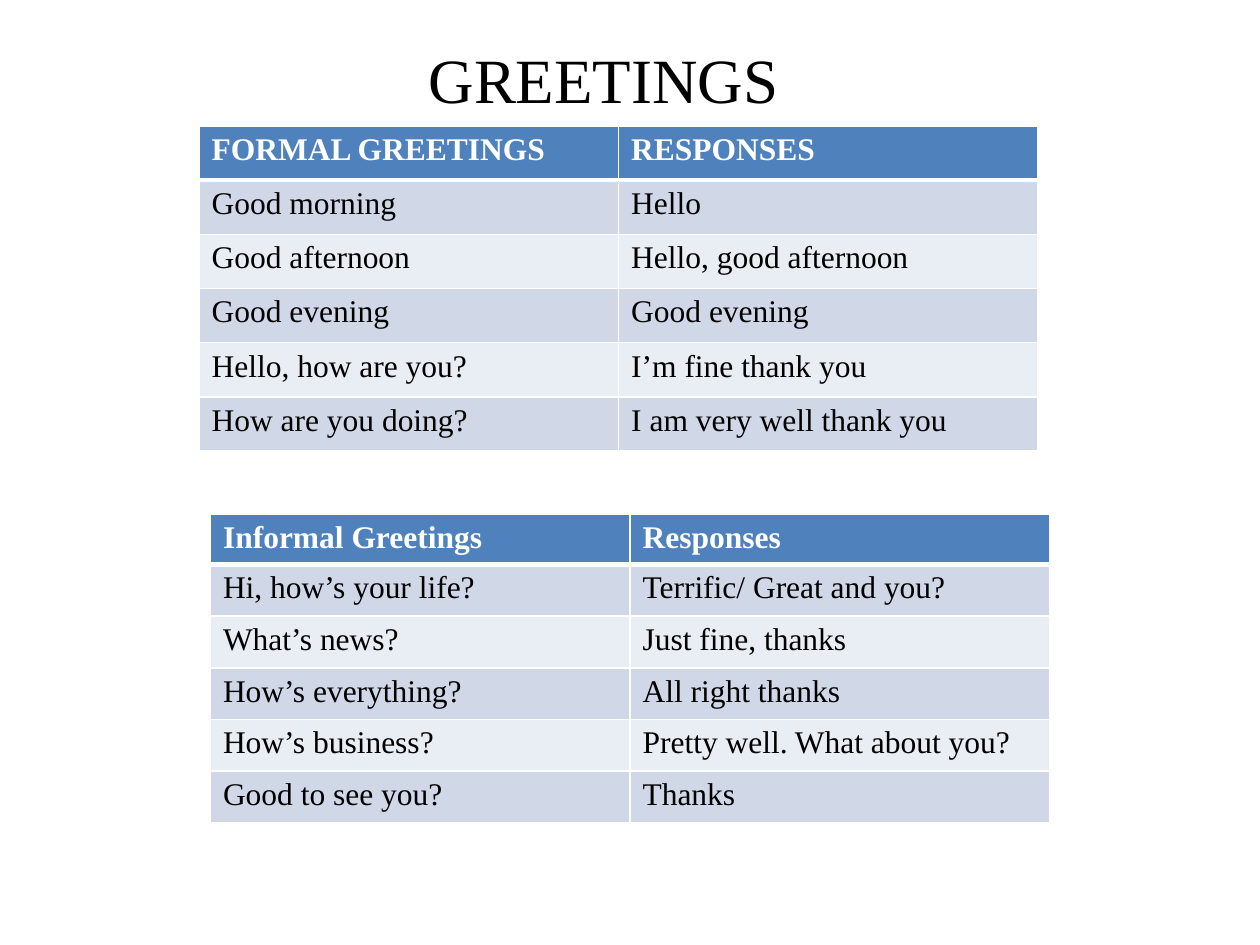
from dataclasses import dataclass

from lxml import etree
from pptx import Presentation
from pptx.dml.color import RGBColor
from pptx.enum.text import MSO_ANCHOR, PP_ALIGN
from pptx.oxml.ns import qn
from pptx.util import Inches, Pt

MIDDLE = MSO_ANCHOR.MIDDLE
CENTER = PP_ALIGN.CENTER
BLANK_LAYOUT = 6


@dataclass(frozen=True)
class Theme:
    font: str = "Times New Roman"
    title_size: int = 36
    body_size: int = 18
    text: str = "000000"
    header_text: str = "FFFFFF"
    header_fill: str = "4F81BD"
    bands: tuple[str, str] = ("D0D8E8", "E9EDF4")
    border: str = "FFFFFF"
    thin: int = 1
    thick: int = 3


@dataclass(frozen=True)
class GreetingTable:
    left: float
    top: float
    header_height: float
    row_height: float
    rows: tuple[tuple[str, str], ...]


THEME = Theme()
COLUMN_WIDTH = 3.33

TABLES = (
    GreetingTable(1.58, 1, 0.43, 0.43, (
        ("FORMAL GREETINGS", "RESPONSES"),
        ("Good morning", "Hello"),
        ("Good afternoon", "Hello, good afternoon"),
        ("Good evening", "Good evening"),
        ("Hello, how are you?", "I’m fine thank you"),
        ("How are you doing?", "I am very well thank you"),
    )),
    GreetingTable(1.67, 4.08, 0.37, 0.41, (
        ("Informal Greetings", "Responses"),
        ("Hi, how’s your life?", "Terrific/ Great and you?"),
        ("What’s news?", "Just fine, thanks"),
        ("How’s everything?", "All right thanks"),
        ("How’s business?", "Pretty well. What about you?"),
        ("Good to see you?", "Thanks"),
    )),
)


def style_text(paragraph, size: int, color: str, bold: bool = False) -> None:
    for run in paragraph.runs:
        run.font.name = THEME.font
        run.font.size = Pt(size)
        run.font.bold = bold
        run.font.color.rgb = RGBColor.from_string(color)


def add_borders(cell, top: int, bottom: int) -> None:
    properties = cell._tc.get_or_add_tcPr()
    widths = {"lnL": THEME.thin, "lnR": THEME.thin, "lnT": top, "lnB": bottom}
    for side, width in widths.items():
        line = etree.SubElement(properties, qn(f"a:{side}"), w=str(Pt(width)))
        fill = etree.SubElement(line, qn("a:solidFill"))
        etree.SubElement(fill, qn("a:srgbClr"), val=THEME.border)


def style_cell(cell, wording: str, row: int) -> None:
    is_header = row == 0
    cell.text_frame.text = wording
    style_text(
        cell.text_frame.paragraphs[0],
        THEME.body_size,
        THEME.header_text if is_header else THEME.text,
        is_header,
    )
    add_borders(
        cell,
        top=THEME.thick if row == 1 else THEME.thin,
        bottom=THEME.thick if is_header else THEME.thin,
    )
    fill_color = THEME.header_fill if is_header else THEME.bands[(row - 1) % 2]
    cell.fill.solid()
    cell.fill.fore_color.rgb = RGBColor.from_string(fill_color)


def add_greeting_table(slide, spec: GreetingTable) -> None:
    row_count, column_count = len(spec.rows), len(spec.rows[0])
    height = spec.header_height + spec.row_height * (row_count - 1)
    table = slide.shapes.add_table(
        row_count, column_count, Inches(spec.left), Inches(spec.top),
        Inches(COLUMN_WIDTH * column_count), Inches(height),
    ).table
    for column in table.columns:
        column.width = Inches(COLUMN_WIDTH)
    for row, wordings in enumerate(spec.rows):
        table.rows[row].height = Inches(spec.row_height if row else spec.header_height)
        for column, wording in enumerate(wordings):
            style_cell(table.cell(row, column), wording, row)


def add_title(slide, wording: str) -> None:
    title = slide.shapes.add_textbox(
        Inches(3.08), Inches(0.25), Inches(3.42), Inches(0.75)
    ).text_frame
    title.word_wrap = True
    title.vertical_anchor = MIDDLE
    title.text = wording
    title.paragraphs[0].alignment = CENTER
    style_text(title.paragraphs[0], THEME.title_size, THEME.text)


def main() -> None:
    presentation = Presentation()
    presentation.slide_width = Inches(10)
    presentation.slide_height = Inches(7.5)
    slide = presentation.slides.add_slide(presentation.slide_layouts[BLANK_LAYOUT])
    add_title(slide, "GREETINGS")
    for spec in TABLES:
        add_greeting_table(slide, spec)
    presentation.save("out.pptx")


if __name__ == "__main__":
    main()
